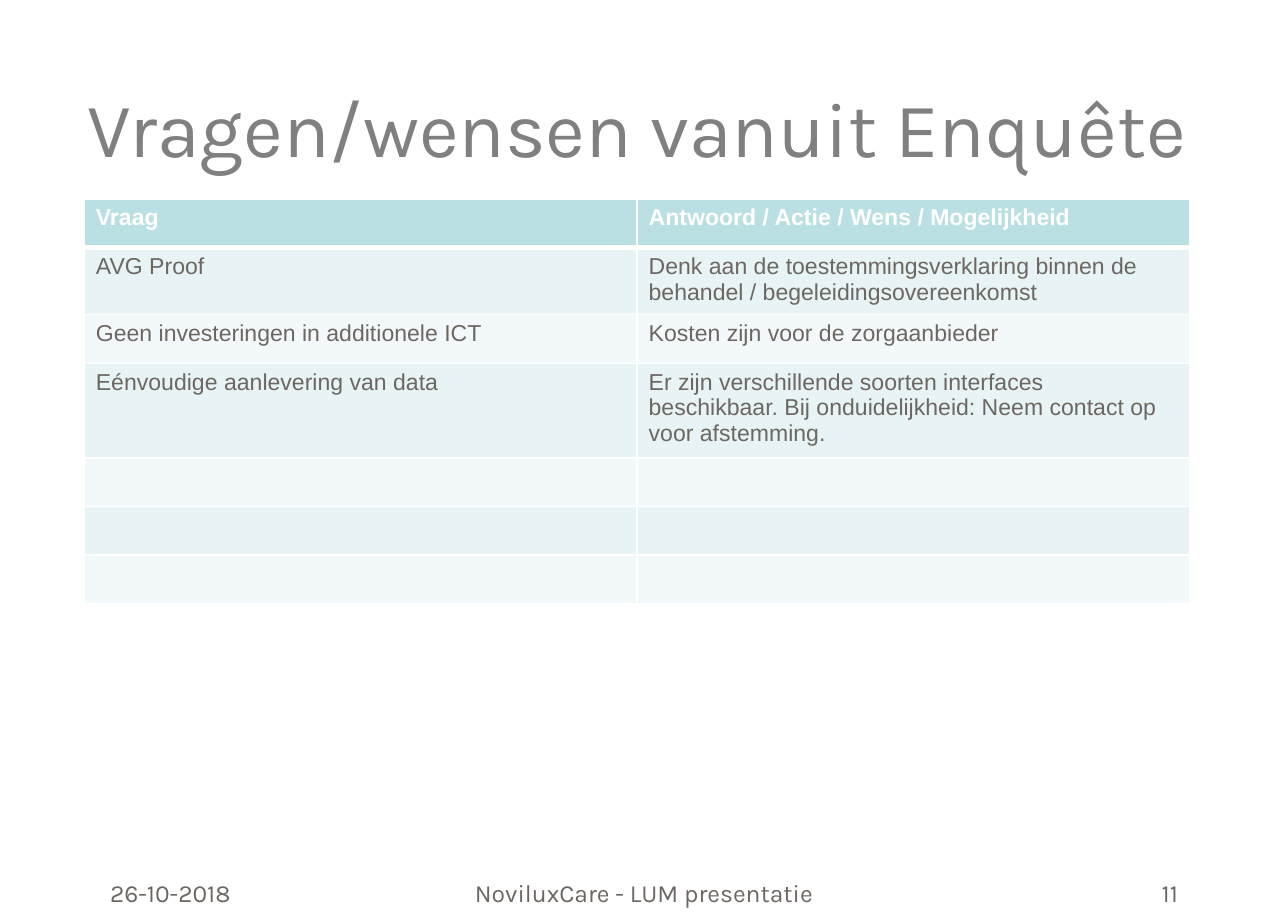
"""Builds the slide with survey questions and wishes."""
import lxml.etree
import pptx
import pptx.dml.color
import pptx.enum.text
import pptx.oxml.ns
import pptx.util

Inches, Pt = pptx.util.Inches, pptx.util.Pt
ALIGN, ANCHOR = pptx.enum.text.PP_ALIGN, pptx.enum.text.MSO_ANCHOR

THEME = {
    "heading_font": "Karla", "table_font": "Arial",
    "title": "808080", "text": "6D6763", "white": "FFFFFF",
    "header": "BBE0E3", "bands": ("E7F3F4", "F3F9FA"),
    "title_size": 47, "footer_size": 15, "table_size": 14,
    "line": 1, "header_line": 3,
}
TITLE = "Vragen/wensen vanuit Enquête"
FOOTERS = [
    ("26-10-2018", 0.82, 2.27, ALIGN.LEFT),
    ("NoviluxCare - LUM presentatie", 3.72, 3.44, ALIGN.CENTER),
    ("11", 7.79, 2.27, ALIGN.RIGHT),
]
ROWS = [
    ("Vraag", "Antwoord / Actie / Wens / Mogelijkheid"),
    ("AVG Proof", "Denk aan de toestemmingsverklaring binnen de behandel / begeleidingsovereenkomst"),
    ("Geen investeringen in additionele ICT", "Kosten zijn voor de zorgaanbieder"),
    ("Eénvoudige aanlevering van data",
     "Er zijn verschillende soorten interfaces beschikbaar. "
     "Bij onduidelijkheid: Neem contact op voor afstemming."),
    ("", ""),
    ("", ""),
    ("", ""),
]
COLUMN_WIDTH, ROW_HEIGHT = 4.67, 0.41


def rgb(color):
    return pptx.dml.color.RGBColor.from_string(color)


def add_run(p, text, font, size, color, bold=False):
    r = p.add_run()
    r.text = text
    r.font.name, r.font.size, r.font.bold = font, Pt(size), bold
    r.font.color.rgb = rgb(color)


def add_text(slide, box, text, size, color, align, anchor=ANCHOR.TOP, left_inset=0.11):
    sp = slide.shapes.add_textbox(*map(Inches, box))
    tf = sp.text_frame
    tf.word_wrap = True
    tf.vertical_anchor = anchor
    tf.margin_left, tf.margin_right = Inches(left_inset), Inches(0.11)
    tf.margin_top = tf.margin_bottom = Inches(0.05)
    p = tf.paragraphs[0]
    p.alignment = align
    add_run(p, text, THEME["heading_font"], size, color)


def set_borders(cell, top, bottom):
    qn = pptx.oxml.ns.qn
    tc_pr = cell._tc.get_or_add_tcPr()
    widths = {"L": THEME["line"], "R": THEME["line"], "T": top, "B": bottom}
    for i, (side, width) in enumerate(widths.items()):
        ln = lxml.etree.Element(qn("a:ln" + side), w=str(Pt(width)))
        fill = lxml.etree.SubElement(ln, qn("a:solidFill"))
        lxml.etree.SubElement(fill, qn("a:srgbClr"), val=THEME["white"])
        tc_pr.insert(i, ln)


def add_question_table(slide):
    columns = len(ROWS[0])
    table = slide.shapes.add_table(
        len(ROWS), columns, Inches(0.71), Inches(1.68),
        Inches(columns * COLUMN_WIDTH), Inches(len(ROWS) * ROW_HEIGHT)).table
    for row in table.rows:
        row.height = Inches(ROW_HEIGHT)
    for i, texts in enumerate(ROWS):
        header = i == 0
        for j, text in enumerate(texts):
            cell = table.cell(i, j)
            cell.fill.solid()
            cell.fill.fore_color.rgb = rgb(THEME["header"] if header else THEME["bands"][(i - 1) % 2])
            set_borders(cell, THEME["header_line" if i == 1 else "line"],
                        THEME["header_line" if header else "line"])
            if text:
                add_run(cell.text_frame.paragraphs[0], text, THEME["table_font"],
                        THEME["table_size"], THEME["white" if header else "text"], header)


def main():
    prs = pptx.Presentation()
    prs.slide_width, prs.slide_height = Inches(10.88), Inches(7.76)
    slide = prs.slides.add_slide(prs.slide_layouts[6])
    add_text(slide, (0.4, 0.42, 10.08, 1.29), TITLE, THEME["title_size"], THEME["title"],
             ALIGN.CENTER, ANCHOR.MIDDLE, 0)
    for text, left, width, align in FOOTERS:
        add_text(slide, (left, 7.36, width, 0.52), text, THEME["footer_size"], THEME["text"], align)
    add_question_table(slide)
    prs.save("out.pptx")


if __name__ == "__main__":
    main()
